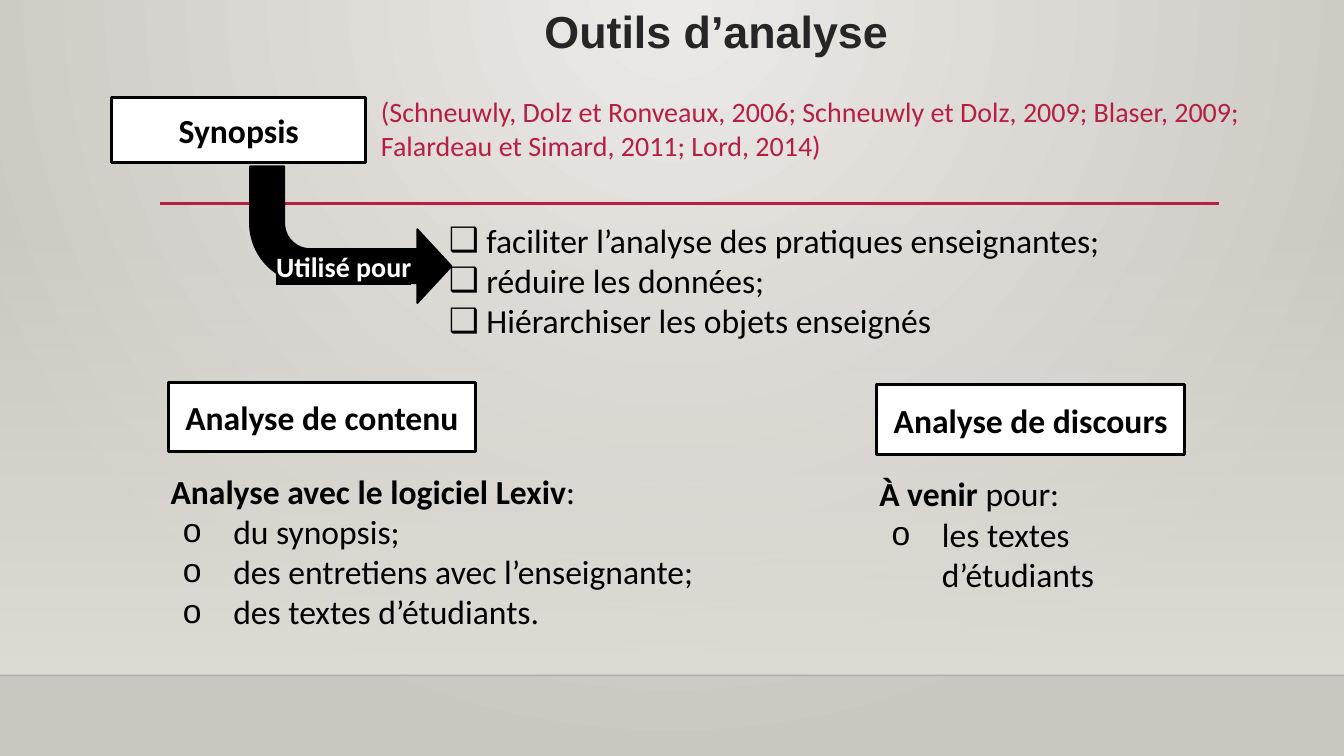
from pptx import Presentation
from pptx.dml.color import RGBColor
from pptx.enum import shapes, text
from pptx.oxml import parse_xml
from pptx.oxml.ns import nsdecls, qn
from pptx.util import Cm, Pt

COLORS = {
    "black": "000000", "white": "FFFFFF", "title": "262626", "accent": "B71E42",
    "bg_light": "ECEAE7", "bg_dark": "CAC7C1", "band": "DFDBD5",
}
WIDTH, HEIGHT = 33.87, 19.05
FLOOR = 17.02


def rgb(name):
    return RGBColor.from_string(COLORS[name])


def set_gradient(parent, stops, shade):
    """Replace the solid fill in parent by (position, colour, opacity) stops."""
    stop_list = "".join(
        f'<a:gs pos="{pos * 1000}"><a:srgbClr val="{COLORS[color]}">'
        f'<a:alpha val="{opacity * 1000}"/></a:srgbClr></a:gs>'
        for pos, color, opacity in stops)
    gradient = parse_xml(f'<a:gradFill {nsdecls("a")} rotWithShape="1">'
                         f'<a:gsLst>{stop_list}</a:gsLst>{shade}</a:gradFill>')
    parent.replace(parent.find(qn("a:solidFill")), gradient)


def add_run(paragraph, words, size=24, color="black", bold=False, font="Calibri"):
    run = paragraph.add_run()
    run.text = words
    run.font.size, run.font.bold, run.font.name = Pt(size), bold, font
    run.font.color.rgb = rgb(color)
    return run


def add_text_frame(slide, left, top, width, height):
    frame = slide.shapes.add_textbox(Cm(left), Cm(top), Cm(width), Cm(height)).text_frame
    frame.word_wrap = True
    return frame


def add_shape(slide, kind, left, top, width, height, fill, line_width=0):
    shape = slide.shapes.add_shape(kind, Cm(left), Cm(top), Cm(width), Cm(height))
    shape.shadow.inherit = False
    shape.fill.solid()
    shape.fill.fore_color.rgb = rgb(fill)
    if line_width:
        shape.line.color.rgb = rgb("black")
        shape.line.width = Pt(line_width)
    else:
        shape.line.fill.background()
    return shape


def add_rule(slide, left, right, y, color, width, opacity=100):
    rule = slide.shapes.add_connector(
        shapes.MSO_CONNECTOR.STRAIGHT, Cm(left), Cm(y), Cm(right), Cm(y))
    rule.line.color.rgb = rgb(color)
    rule.line.width = Pt(width)
    properties = rule._element.spPr
    if opacity < 100:
        properties.find(".//" + qn("a:srgbClr")).append(
            parse_xml(f'<a:alpha {nsdecls("a")} val="{opacity * 1000}"/>'))
    properties.append(parse_xml(f'<a:effectLst {nsdecls("a")}/>'))


def add_label_box(slide, left, top, width, height, label):
    box = add_shape(slide, shapes.MSO_SHAPE.RECTANGLE, left, top, width, height,
                    "white", 2.25)
    box.text_frame.vertical_anchor = text.MSO_ANCHOR.MIDDLE
    paragraph = box.text_frame.paragraphs[0]
    paragraph.alignment = text.PP_ALIGN.CENTER
    add_run(paragraph, label, bold=True)


def add_bullet(paragraph, words, mark, margin, hanging):
    properties = paragraph._p.get_or_add_pPr()
    properties.set("marL", str(Cm(margin)))
    properties.set("indent", str(-Cm(hanging)))
    properties.append(parse_xml(f'<a:buFont {nsdecls("a")} typeface="Arial"/>'))
    properties.append(parse_xml(f'<a:buChar {nsdecls("a")} char="{mark}"/>'))
    add_run(paragraph, words)


def draw_backdrop(slide):
    slide.background.fill.solid()
    set_gradient(slide.element.find(".//" + qn("p:bgPr")),
                 [(0, "bg_light", 100), (100, "bg_dark", 100)],
                 '<a:path path="circle">'
                 '<a:fillToRect l="43000" t="0" r="43000" b="100000"/></a:path>')
    band_top = 5.61
    band = add_shape(slide, shapes.MSO_SHAPE.RECTANGLE, 0, band_top,
                     WIDTH, FLOOR - band_top, "band")
    set_gradient(band._element.spPr, [(0, "band", 0), (100, "band", 100)],
                 '<a:lin ang="5400000" scaled="0"/>')
    add_rule(slide, 0, WIDTH, FLOOR, "black", 1, opacity=20)
    add_rule(slide, 4.04, 30.73, 5.13, "accent", 2.5)


def draw_title(slide, left, top, width, height):
    frame = add_text_frame(slide, left, top, width, height)
    frame.margin_top = frame.margin_bottom = 0
    title = frame.paragraphs[0]
    title.alignment = text.PP_ALIGN.CENTER
    add_run(title, "Outils d’analyse", 32, "title", True, "Arial")


def draw_synopsis(slide, left, top):
    """Synopsis box with its references, the arrow and the list of purposes."""
    purposes = add_text_frame(slide, left + 6.96, top + 2.95, 19.86, 3.33)
    for index, purpose in enumerate((
            "faciliter l’analyse des pratiques enseignantes;",
            "réduire les données;",
            "Hiérarchiser les objets enseignés")):
        paragraph = purposes.add_paragraph() if index else purposes.paragraphs[0]
        add_bullet(paragraph, purpose, "❑", 2.23, 0.95)

    add_label_box(slide, left, top, 6.4, 1.63, "Synopsis")
    references = add_text_frame(slide, left + 6.53, top - 0.2, 22.83, 2.74)
    add_run(references.paragraphs[0],
            "(Schneuwly, Dolz et Ronveaux, 2006; Schneuwly et Dolz, 2009; "
            "Blaser, 2009; Falardeau et Simard, 2011; Lord, 2014)", 20, "accent")

    arrow = add_shape(slide, shapes.MSO_SHAPE.BENT_ARROW, left + 3.48, top + 1.73,
                      5.08, 3.45, "black", 1.25)
    arrow._element.spPr.find(qn("a:xfrm")).set("flipV", "1")
    for index, value in enumerate((0.25, 0.27, 0.25, 0.44)):
        arrow.adjustments[index] = value
    caption = add_text_frame(slide, left + 3.89, top + 3.69, 4.67, 1.12)
    used_for = add_run(caption.paragraphs[0], "Utilisé pour", 20, "white", True)
    used_for.font._element.find(qn("a:solidFill")).addnext(parse_xml(
        f'<a:highlight {nsdecls("a")}><a:srgbClr val="{COLORS["black"]}"/></a:highlight>'))


def draw_analysis(slide, left, top, width, label, heading, ending, items):
    """Labelled box above a heading, bold then plain, and its bulleted items."""
    add_label_box(slide, left, top, 7.75, 1.75, label)
    details = add_text_frame(slide, left - 0.19, top + 2.1, width, 1.28 + 1.03 * len(items))
    add_run(details.paragraphs[0], heading, bold=True)
    add_run(details.paragraphs[0], ending)
    for item in items:
        add_bullet(details.add_paragraph(), item, "o", 1.58, 1.27)


def main():
    deck = Presentation()
    deck.slide_width, deck.slide_height = Cm(WIDTH), Cm(HEIGHT)
    slide = deck.slides.add_slide(deck.slide_layouts[6])
    draw_backdrop(slide)
    draw_title(slide, 2.24, 0.1, 31.63, 1.5)
    draw_synopsis(slide, 2.82, 2.46)
    draw_analysis(slide, 4.24, 9.63, 13.8, "Analyse de contenu",
                  "Analyse avec le logiciel Lexiv", ":",
                  ("du synopsis;", "des entretiens avec l’enseignante;",
                   "des textes d’étudiants."))
    draw_analysis(slide, 22.1, 9.7, 8.48, "Analyse de discours",
                  "À venir ", "pour:", ("les textes d’étudiants",))
    deck.save("out.pptx")


if __name__ == "__main__":
    main()
